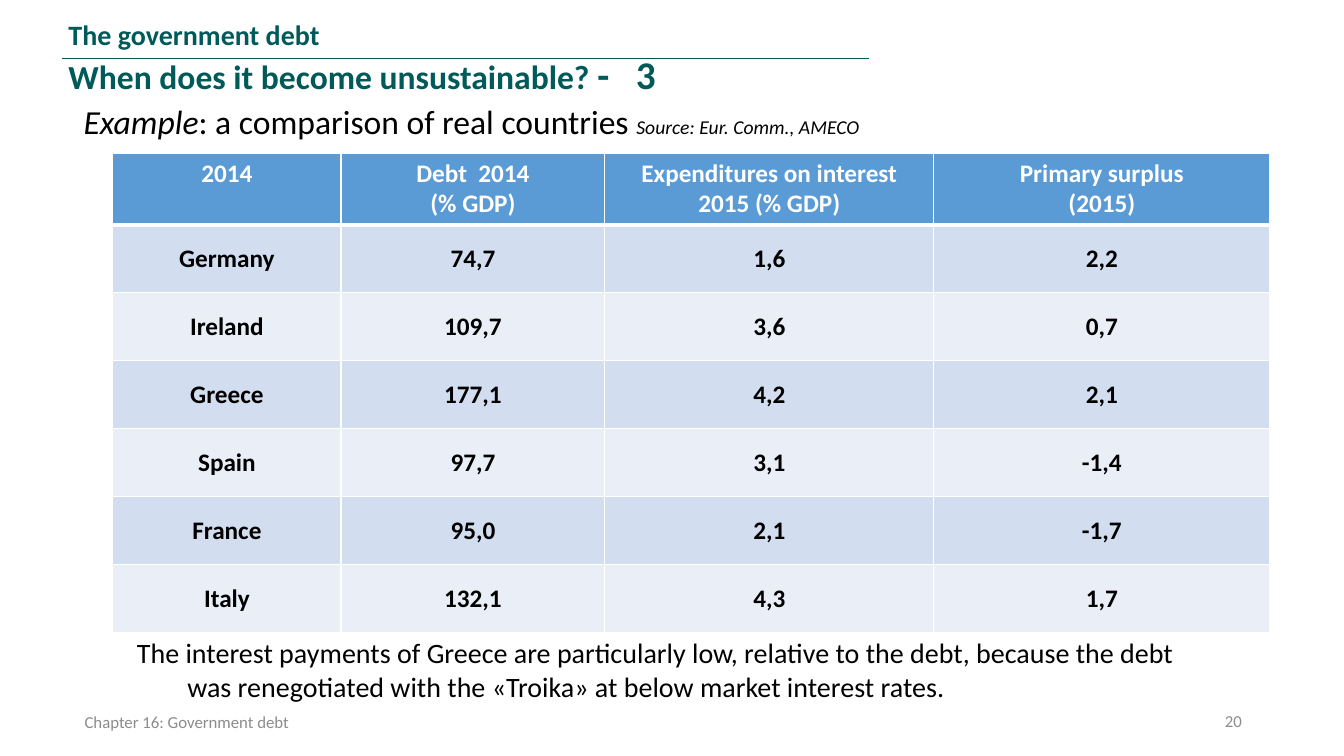
from dataclasses import dataclass

from lxml.etree import SubElement
from pptx import Presentation
from pptx.dml.color import RGBColor
from pptx.enum.shapes import MSO_CONNECTOR
from pptx.enum.text import MSO_ANCHOR, PP_ALIGN
from pptx.oxml.ns import qn
from pptx.slide import Slide
from pptx.table import _Cell as Cell
from pptx.text.text import _Paragraph as Paragraph
from pptx.util import Pt

FONT = "Calibri"
COLORS = {
    "title": "005A5A",
    "rule": "005A58",
    "footer": "8C8C8C",
    "text": "000000",
    "white": "FFFFFF",
    "header": "5B9BD5",
    "odd_row": "D2DEEF",
    "even_row": "EAEFF7",
}

HEADERS = [
    ["2014"],
    ["Debt  2014", "(% GDP)"],
    ["Expenditures on interest", "2015 (% GDP)"],
    ["Primary surplus", "(2015)"],
]
COUNTRIES = [
    ["Germany", "74,7", "1,6", "2,2"],
    ["Ireland", "109,7", "3,6", "0,7"],
    ["Greece", "177,1", "4,2", "2,1"],
    ["Spain", "97,7", "3,1", "-1,4"],
    ["France", "95,0", "2,1", "-1,7"],
    ["Italy", "132,1", "4,3", "1,7"],
]
COLUMN_WIDTHS = [163, 188.5, 235, 240]
ROW_HEIGHT = 48.6
TABLE_LEFT, TABLE_TOP = 80.6, 109.4


@dataclass
class TextRun:
    text: str
    size: float
    color: str = "text"
    bold: bool = False
    italic: bool = False


@dataclass
class TextBlock:
    left: float
    top: float
    width: float
    height: float
    lines: list[list[TextRun]]
    anchor: MSO_ANCHOR = MSO_ANCHOR.TOP
    align: PP_ALIGN = PP_ALIGN.LEFT
    margin: float = 0
    indent: float = 0


TEXT_BLOCKS = [
    # Slide number and footer
    TextBlock(678.2, 500.4, 216, 28.8, [[TextRun("20", 12, "footer")]],
              MSO_ANCHOR.MIDDLE, PP_ALIGN.RIGHT),
    TextBlock(53.3, 501.1, 250.6, 28.8,
              [[TextRun("Chapter 16: Government debt", 12, "footer")]],
              MSO_ANCHOR.MIDDLE),
    # Title
    TextBlock(41.8, 8.6, 706.3, 65.5, [
        [TextRun("The government debt", 20, "title", bold=True)],
        [TextRun("When does it become unsustainable? ", 24, "title", bold=True),
         TextRun("-   3", 28, "title", bold=True)],
    ]),
    # Example heading
    TextBlock(52.6, 73.5, 851.8, 25.2, [[
        TextRun("Example", 24, italic=True),
        TextRun(": a comparison of real countries ", 24),
        TextRun("Source: Eur. Comm., AMECO", 14, italic=True),
    ]], MSO_ANCHOR.MIDDLE),
    # Remark on Greece
    TextBlock(61.2, 450.7, 812.2, 55.4, [[TextRun(
        "The interest payments of Greece are particularly low, relative to "
        "the debt, because the debt was renegotiated with the «Troika» at "
        "below market interest rates.", 20)]], margin=65.5, indent=-36),
]


def rgb(name: str) -> RGBColor:
    return RGBColor.from_string(COLORS[name])


def add_run(paragraph: Paragraph, text_run: TextRun) -> None:
    run = paragraph.add_run()
    run.text = text_run.text
    run.font.name = FONT
    run.font.size = Pt(text_run.size)
    run.font.bold = text_run.bold
    run.font.italic = text_run.italic
    run.font.color.rgb = rgb(text_run.color)


def fill_lines(frame, lines: list[list[TextRun]], align: PP_ALIGN) -> None:
    for index, line in enumerate(lines):
        paragraph = frame.add_paragraph() if index else frame.paragraphs[0]
        paragraph.alignment = align
        for text_run in line:
            add_run(paragraph, text_run)


def add_text_block(slide: Slide, block: TextBlock) -> None:
    shape = slide.shapes.add_textbox(
        Pt(block.left), Pt(block.top), Pt(block.width), Pt(block.height))
    frame = shape.text_frame
    frame.word_wrap = True
    frame.vertical_anchor = block.anchor
    fill_lines(frame, block.lines, block.align)
    if block.margin:
        for paragraph in frame.paragraphs:
            properties = paragraph._p.get_or_add_pPr()
            properties.set("marL", str(Pt(block.margin)))
            properties.set("indent", str(Pt(block.indent)))


def add_title_rule(slide: Slide) -> None:
    rule = slide.shapes.add_connector(
        MSO_CONNECTOR.STRAIGHT, Pt(44.6), Pt(41.8), Pt(620.6), Pt(41.8))
    rule.line.color.rgb = rgb("rule")
    rule.line.width = Pt(0.5)
    SubElement(rule._element.spPr, qn("a:effectLst"))


def set_borders(cell: Cell, top: float, bottom: float) -> None:
    properties = cell._tc.get_or_add_tcPr()
    for side, width in (("L", 1), ("R", 1), ("T", top), ("B", bottom)):
        line = SubElement(properties, qn(f"a:ln{side}"), w=str(Pt(width)))
        fill = SubElement(line, qn("a:solidFill"))
        SubElement(fill, qn("a:srgbClr"), val=COLORS["white"])


def fill_cell(cell: Cell, lines: list[str], row: int) -> None:
    is_header = row == 0
    set_borders(cell, top=3 if row == 1 else 1, bottom=3 if is_header else 1)
    cell.fill.solid()
    band = "odd_row" if row % 2 else "even_row"
    cell.fill.fore_color.rgb = rgb("header" if is_header else band)
    cell.vertical_anchor = MSO_ANCHOR.TOP if is_header else MSO_ANCHOR.MIDDLE
    color = "white" if is_header else "text"
    runs = [[TextRun(line, 18, color, bold=True)] for line in lines]
    fill_lines(cell.text_frame, runs, PP_ALIGN.CENTER)


def add_debt_table(slide: Slide) -> None:
    rows = [HEADERS] + [[[value] for value in country] for country in COUNTRIES]
    table = slide.shapes.add_table(
        len(rows), len(COLUMN_WIDTHS), Pt(TABLE_LEFT), Pt(TABLE_TOP),
        Pt(sum(COLUMN_WIDTHS)), Pt(ROW_HEIGHT * len(rows))).table
    for column, width in zip(table.columns, COLUMN_WIDTHS):
        column.width = Pt(width)
    for row_index, row in enumerate(rows):
        table.rows[row_index].height = Pt(ROW_HEIGHT)
        for column_index, lines in enumerate(row):
            fill_cell(table.cell(row_index, column_index), lines, row_index)


def main() -> None:
    presentation = Presentation()
    presentation.slide_width, presentation.slide_height = Pt(960), Pt(540)
    slide = presentation.slides.add_slide(presentation.slide_layouts[6])
    add_title_rule(slide)
    add_debt_table(slide)
    for block in TEXT_BLOCKS:
        add_text_block(slide, block)
    presentation.save("out.pptx")


if __name__ == "__main__":
    main()
